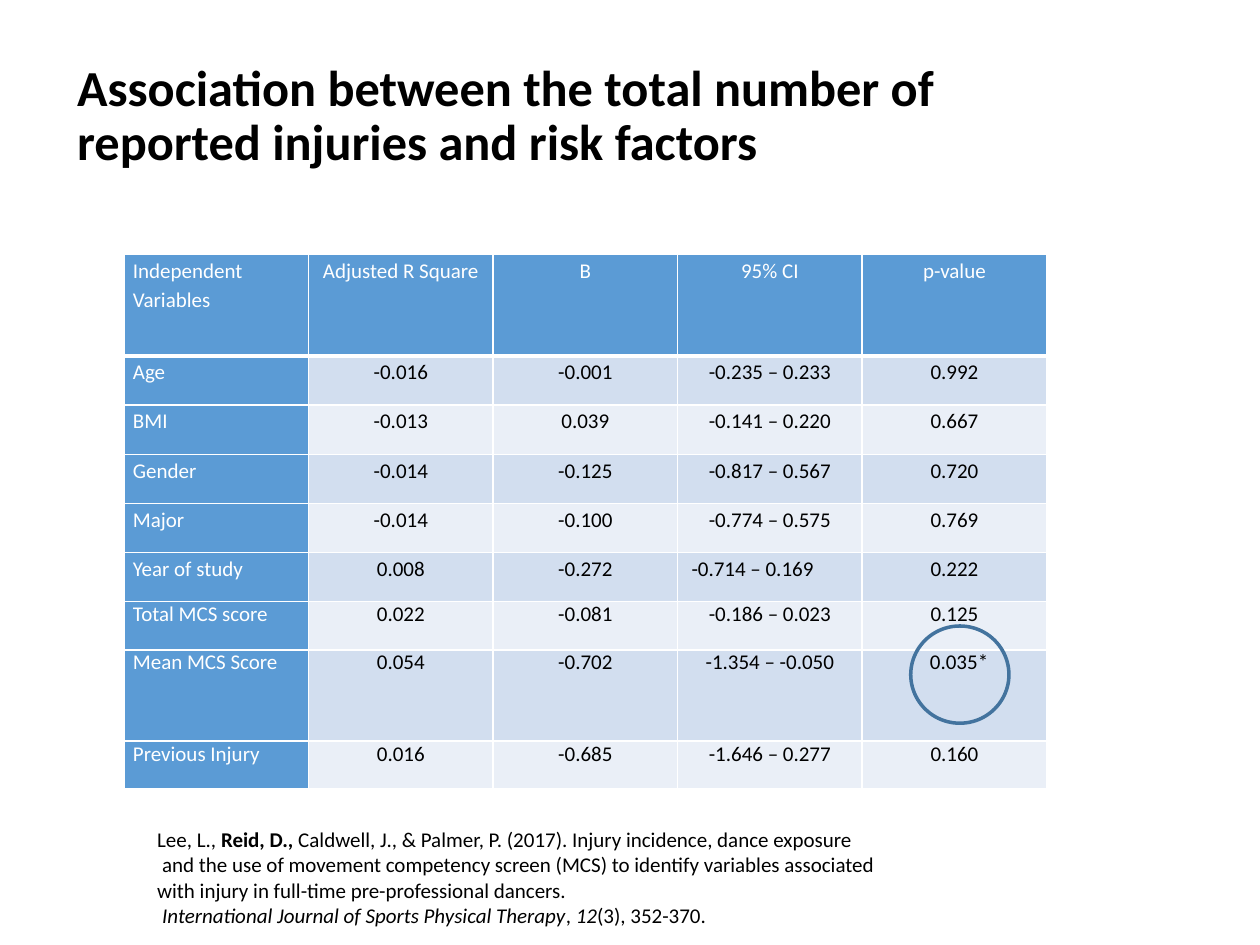
from lxml.etree import SubElement
from pptx import Presentation
from pptx.dml.color import RGBColor
from pptx.enum.shapes import MSO_SHAPE as Shape
from pptx.enum.text import MSO_ANCHOR as Anchor, PP_ALIGN as Align
from pptx.oxml.ns import qn
from pptx.util import Cm, Pt

COLOURS = {
    "ink": "000000",
    "white": "FFFFFF",
    "header": "5B9BD5",
    "odd_row": "D2DEEF",
    "even_row": "EAEFF7",
    "ring": "43739E",
}
FONT = "Calibri"
TITLE = "Association between the total number of reported injuries and risk factors"
HEADINGS = ["Independent Variables", "Adjusted R Square", "B", "95% CI", "p-value"]
RISK_FACTORS = [
    ["Age", "-0.016", "-0.001", "-0.235 – 0.233", "0.992"],
    ["BMI", "-0.013", "0.039", "-0.141 – 0.220", "0.667"],
    ["Gender", "-0.014", "-0.125", "-0.817 – 0.567", "0.720"],
    ["Major", "-0.014", "-0.100", "-0.774 – 0.575", "0.769"],
    ["Year of study", "0.008", "-0.272", "-0.714 – 0.169", "0.222"],
    ["Total MCS score", "0.022", "-0.081", "-0.186 – 0.023", "0.125"],
    ["Mean MCS Score", "0.054", "-0.702", "-1.354 – -0.050", "0.035*"],
    ["Previous Injury", "0.016", "-0.685", "-1.646 – 0.277", "0.160"],
]
ROW_HEIGHTS = [2.05] + [0.99] * 5 + [0.97, 1.84, 0.97]
LAST_LOOSE_ROW = 5
LEFT_ALIGNED_CELL = (5, 3)
SIGNIFICANT_CELL = (7, 4)
CITATION = [
    (0, [("Lee, L., ", ""), ("Reid, D.,", "bold"),
         (" Caldwell, J., & Palmer, P. (2017). Injury incidence, dance exposure", "")]),
    (0.1, [("and the use of movement competency screen (MCS) to identify variables associated", "")]),
    (0, [("with injury in full-time pre-professional dancers.", "")]),
    (0.1, [("International Journal of Sports Physical Therapy", "italic"), (", ", ""),
           ("12", "italic"), ("(3), 352-370.", "")]),
]


def colour(name):
    return RGBColor.from_string(COLOURS[name])


def set_font(paragraph, size, name="ink", bold=False):
    font = paragraph.font
    font.name, font.size, font.bold = FONT, Pt(size), bold
    font.color.rgb = colour(name)


def add_title(page):
    title = page.shapes.title
    title.left, title.top, title.width, title.height = Cm(1.3), Cm(1.27), Cm(21.16), Cm(3.18)
    frame = title.text_frame
    frame.text = TITLE
    frame.word_wrap = True
    frame.vertical_anchor = Anchor.TOP
    frame.margin_top = 0
    para = frame.paragraphs[0]
    para.alignment = Align.LEFT
    para.line_spacing = 0.9
    set_font(para, 28.8, bold=True)


def set_borders(cell, bottom_width):
    properties = cell._tc.get_or_add_tcPr()
    for side, width in (("L", 1), ("R", 1), ("T", 1), ("B", bottom_width)):
        line = SubElement(properties, qn(f"a:ln{side}"), w=str(Pt(width)))
        fill = SubElement(line, qn("a:solidFill"))
        SubElement(fill, qn("a:srgbClr"), val=COLOURS["white"])


def fill_cell(cell, text, row, column):
    is_heading = row == 0 or column == 0
    set_borders(cell, 3 if row == 0 else 1)
    cell.fill.solid()
    cell.fill.fore_color.rgb = colour(
        "header" if is_heading else "odd_row" if row % 2 else "even_row")
    cell.margin_left = cell.margin_right = Cm(0.18)
    cell.margin_top = cell.margin_bottom = 0
    cell.text = text
    para = cell.text_frame.paragraphs[0]
    para.alignment = Align.LEFT if column == 0 else Align.CENTER
    para.line_spacing = 1.15 if row <= LAST_LOOSE_ROW else 1.0
    set_font(para, 12, "white" if is_heading else "ink")
    if (row, column) == LEFT_ALIGNED_CELL:
        para.alignment = Align.LEFT
        cell.margin_left = Cm(0.28)
    if (row, column) == SIGNIFICANT_CELL:
        cell.margin_left = Cm(0.37)


def add_risk_table(page):
    rows = [HEADINGS] + RISK_FACTORS
    table = page.shapes.add_table(
        len(rows), len(HEADINGS), Cm(2.5), Cm(5.13), Cm(18.6), Cm(sum(ROW_HEIGHTS))).table
    table.first_col = True
    for column in table.columns:
        column.width = Cm(3.72)
    for row, height in zip(table.rows, ROW_HEIGHTS):
        row.height = Cm(height)
    for row, texts in enumerate(rows):
        for column, text in enumerate(texts):
            fill_cell(table.cell(row, column), text, row, column)


def add_ring(page):
    ring = page.shapes.add_shape(Shape.OVAL, Cm(18.36), Cm(12.62), Cm(1.98), Cm(1.96))
    ring.shadow.inherit = False
    ring.fill.background()
    ring.line.color.rgb = colour("ring")
    ring.line.width = Pt(2)


def add_citation(page):
    box = page.shapes.add_textbox(Cm(2.92), Cm(16.54), Cm(15.24), Cm(3.07))
    frame = box.text_frame
    frame.word_wrap = False
    for index, (indent, spans) in enumerate(CITATION):
        para = frame.add_paragraph() if index else frame.paragraphs[0]
        para._p.get_or_add_pPr().set("marL", str(Cm(indent)))
        set_font(para, 12)
        for text, style in spans:
            span = para.add_run()
            span.text = text
            if style:
                setattr(span.font, style, True)


def main():
    deck = Presentation()
    deck.slide_width, deck.slide_height = Cm(25.4), Cm(19.05)
    page = deck.slides.add_slide(deck.slide_layouts[5])
    add_title(page)
    add_risk_table(page)
    add_ring(page)
    add_citation(page)
    deck.save("out.pptx")


if __name__ == "__main__":
    main()
